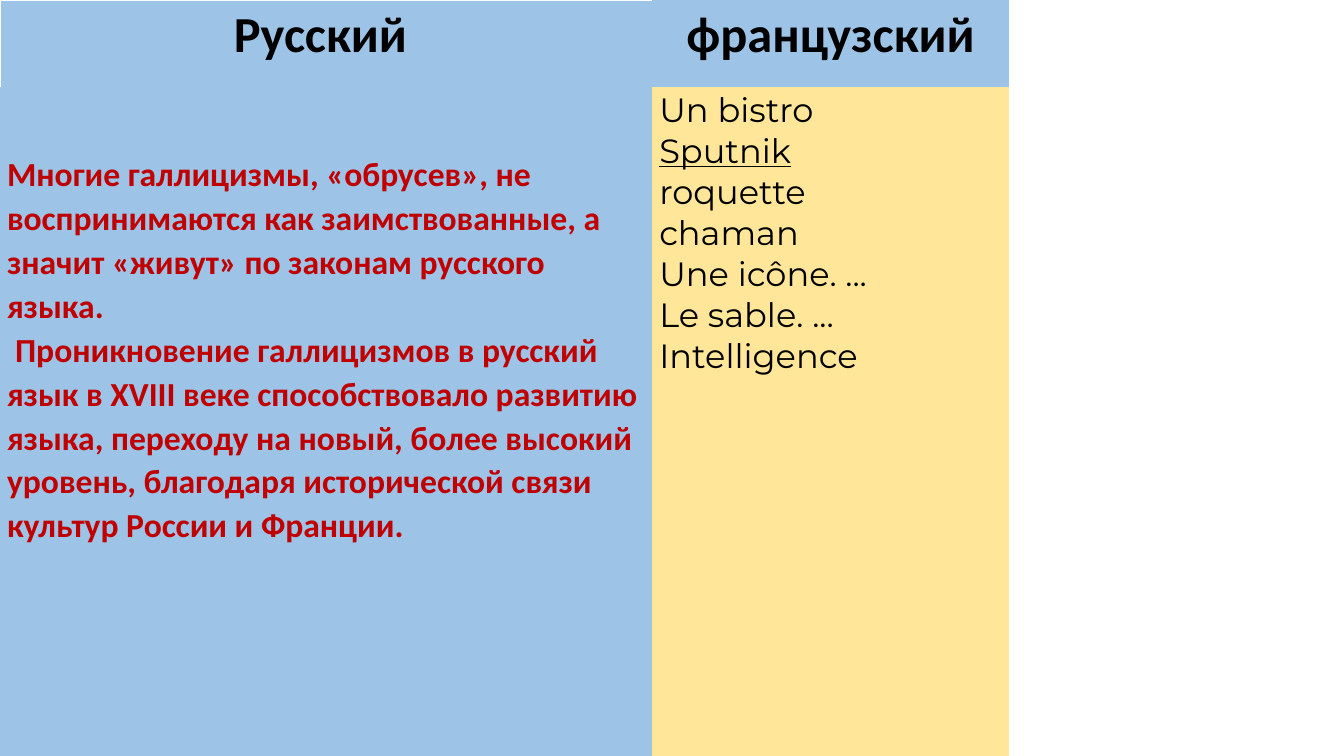
from pptx import Presentation
from pptx import util as u
from pptx.dml.color import RGBColor
from pptx.enum import text
from pptx.oxml.ns import qn
from lxml import etree

BLUE = RGBColor(0x9D, 0xC3, 0xE6)
YELLOW = RGBColor(0xFF, 0xE6, 0x99)
RED = RGBColor(0xC0, 0x00, 0x00)
BLACK = RGBColor(0x00, 0x00, 0x00)
WHITE = RGBColor(0xFF, 0xFF, 0xFF)

RUSSIAN_NOTES = [
    "Многие галлицизмы, «обрусев», не воспринимаются как заимствованные, "
    "а значит «живут» по законам русского языка.",
    "Проникновение галлицизмов в русский язык в XVIII веке способствовало "
    "развитию языка, переходу на новый, более высокий уровень, благодаря "
    "исторической связи культур России и Франции.",
]
FRENCH_WORDS = ["Un bistro", "Sputnik", "roquette", "chaman",
                "Une icône. ...", "Le sable. ...", "Intelligence"]


class SlideBuilder:
    heading_font = "Calibri"
    word_font = "Montserrat"
    spacing = 1.07

    def __init__(self, prs):
        self.s = prs.slides.add_slide(prs.slide_layouts[6])

    def table(self, widths, heights):
        sp = self.s.shapes.add_table(
            len(heights), len(widths), 0, 0,
            u.Inches(sum(widths)), u.Inches(sum(heights)))
        tbl = sp.table
        tbl.horz_banding = False
        for column, width in zip(tbl.columns, widths):
            column.width = u.Inches(width)
        for row, height in zip(tbl.rows, heights):
            row.height = u.Inches(height)
        return tbl

    def borders(self, cell, visible):
        tc_pr = cell._tc.get_or_add_tcPr()
        for side in "LRTB":
            ln = etree.SubElement(tc_pr, qn(f"a:ln{side}"), w=str(u.Pt(1)))
            if side in visible:
                fill = etree.SubElement(ln, qn("a:solidFill"))
                etree.SubElement(fill, qn("a:srgbClr"), val=str(WHITE))
            else:
                etree.SubElement(ln, qn("a:noFill"))

    def cell(self, cell, lines, fill, font, size, color, bold,
             align=text.PP_ALIGN.LEFT, top=0, visible=""):
        self.borders(cell, visible)
        cell.fill.solid()
        cell.fill.fore_color.rgb = fill
        cell.margin_left = cell.margin_right = u.Inches(0.07)
        cell.margin_top = u.Inches(top)
        cell.margin_bottom = 0
        cell.vertical_anchor = text.MSO_ANCHOR.TOP
        tf = cell.text_frame
        tf.text = "\n".join(lines)
        for p in tf.paragraphs:
            p.alignment = align
            p.line_spacing = self.spacing
            p.font.name = font
            p.font.size = u.Pt(size)
            p.font.bold = bold
            p.font.color.rgb = color
        return tf.paragraphs


def main():
    prs = Presentation()
    prs.slide_width = u.Inches(13.33)
    prs.slide_height = u.Inches(7.5)
    slide = SlideBuilder(prs)
    tbl = slide.table([6.47, 3.54], [0.86, 6.64])

    for col, (title, visible) in enumerate([("Русский ", "LT"), ("французский", "")]):
        slide.cell(tbl.cell(0, col), [title], BLUE, slide.heading_font, 36,
                   BLACK, True, text.PP_ALIGN.CENTER, visible=visible)

    notes = slide.cell(tbl.cell(1, 0), RUSSIAN_NOTES, BLUE,
                       slide.heading_font, 24, RED, True, top=0.65)
    notes[1]._p.get_or_add_pPr().set("indent", str(u.Inches(0.08)))

    words = slide.cell(tbl.cell(1, 1), FRENCH_WORDS, YELLOW,
                       slide.word_font, 24, BLACK, False)
    for p in words[1:]:
        p.line_spacing = 1.0
    words[1].font.underline = True

    prs.save("out.pptx")


if __name__ == "__main__":
    main()
